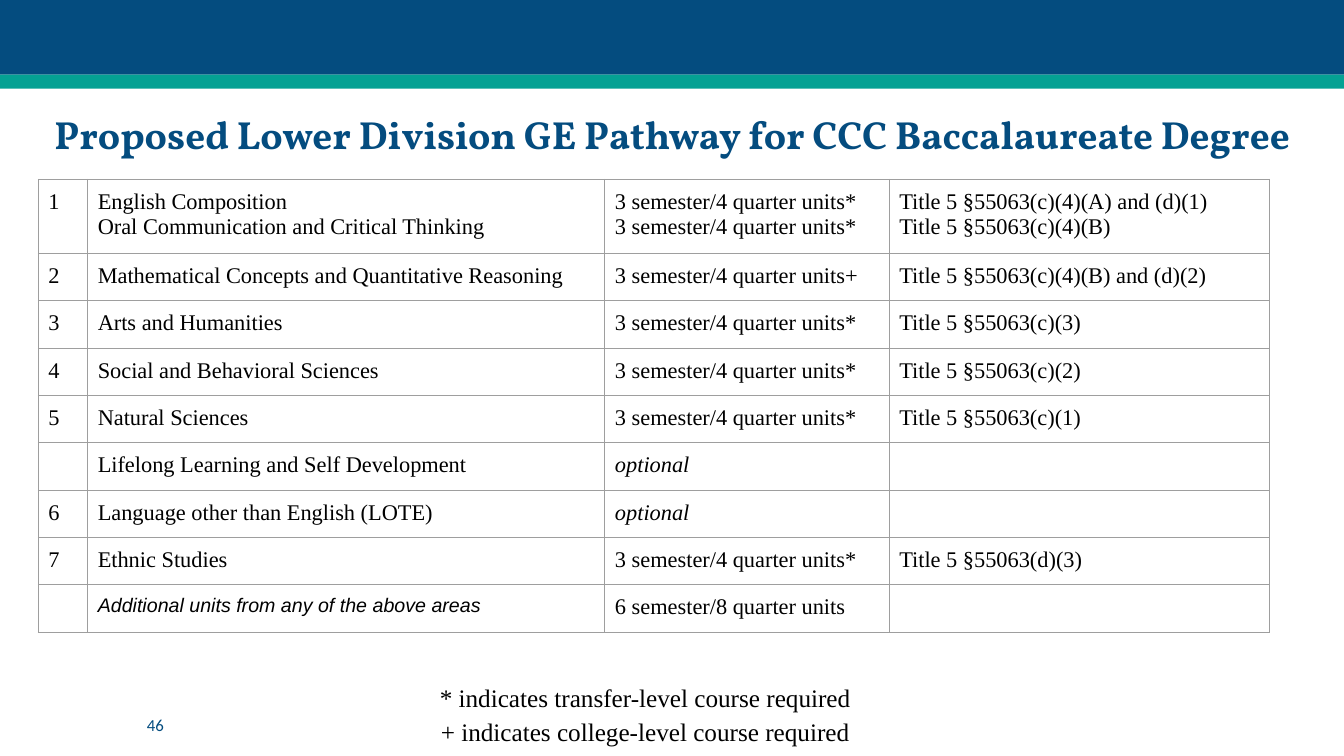
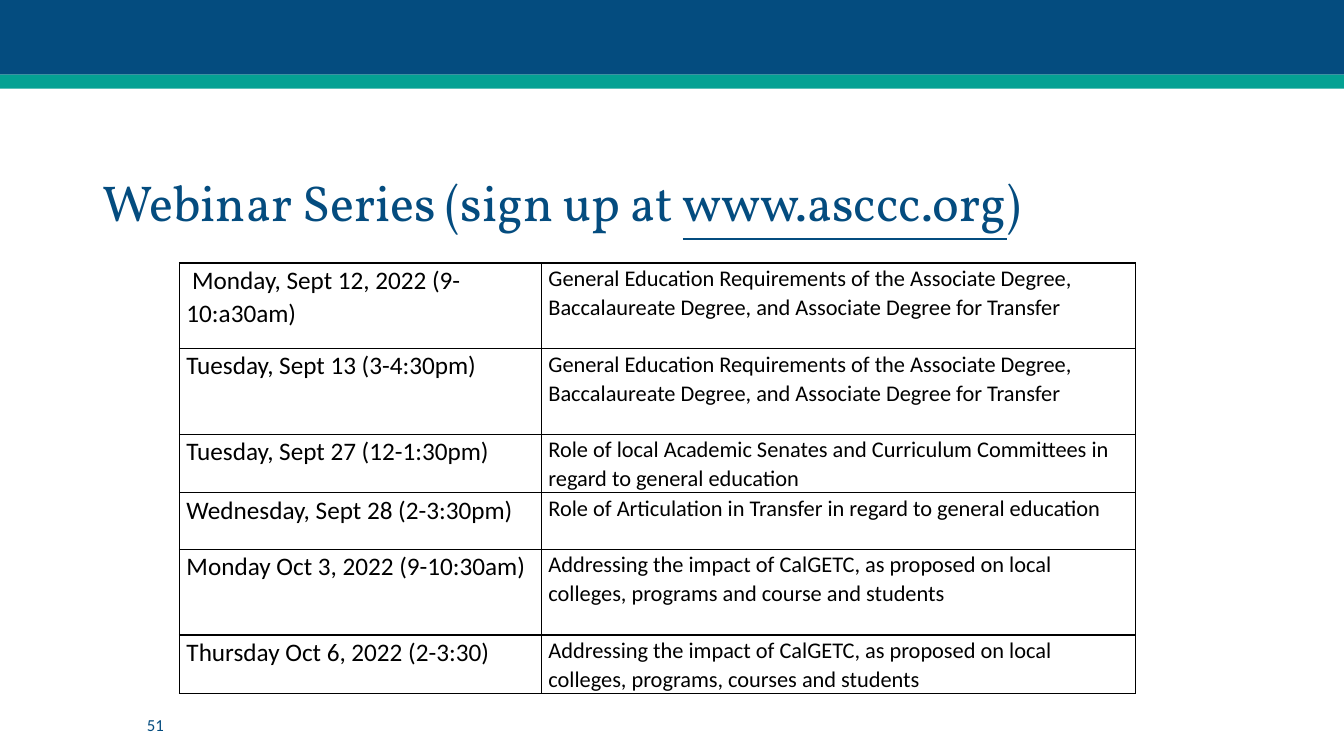
from lxml.etree import SubElement as Sub
from pptx import Presentation
from pptx.dml.color import RGBColor as Rgb
from pptx.enum.shapes import MSO_SHAPE as Shape
from pptx.enum.text import MSO_ANCHOR as Anchor, MSO_AUTO_SIZE as Auto, PP_ALIGN as Align
from pptx.oxml.ns import qn
from pptx.util import Inches, Pt

HUES = {"navy": "044C7F", "teal": "04A193", "black": "000000", "gray": "9E9E9E"}
SIDES = ("left", "top", "width", "height")
EDGES = ("left", "top", "right", "bottom")

HEAD = {"name": "Vollkorn", "size": Pt(36), "color": "navy"}
FOOT = {"name": "Calibri", "size": Pt(12), "color": "navy"}
SERIF = {"name": "Times New Roman", "size": Pt(16), "color": "black"}
SANS = {"name": "Calibri", "size": Pt(18), "color": "black"}
SLANT = {"italic": True}

UNITS = "3 semester/4 quarter units"
CODE = "Title 5 §55063"
EXTRA = "Additional units from any of the above areas"
AREAS = [
    ("1", "English Composition\nOral Communication and Critical Thinking",
     f"{UNITS}*\n{UNITS}*", f"{CODE}(c)(4)(A) and (d)(1)\n{CODE}(c)(4)(B)"),
    ("2", "Mathematical Concepts and Quantitative Reasoning",
     f"{UNITS}+", f"{CODE}(c)(4)(B) and (d)(2)"),
    ("3", "Arts and Humanities", f"{UNITS}*", f"{CODE}(c)(3)"),
    ("4", "Social and Behavioral Sciences", f"{UNITS}*", f"{CODE}(c)(2)"),
    ("5", "Natural Sciences", f"{UNITS}*", f"{CODE}(c)(1)"),
    ("", "Lifelong Learning and Self Development", "optional", ""),
    ("6", "Language other than English (LOTE)", "optional", ""),
    ("7", "Ethnic Studies", f"{UNITS}*", f"{CODE}(d)(3)"),
    ("", EXTRA, "6 semester/8 quarter units", ""),
]
STYLES = {"optional": SLANT, EXTRA: {"name": "Arial", "size": Pt(14), **SLANT}}

BASICS = ("General Education Requirements of the Associate Degree, "
          "Baccalaureate Degree, and Associate Degree for Transfer")
IMPACT = "Addressing the impact of CalGETC, as proposed on local colleges, programs"
TALKS = [
    (" Monday, Sept 12, 2022 (9-10:a30am)", BASICS),
    ("Tuesday, Sept 13 (3-4:30pm)", BASICS),
    ("Tuesday, Sept 27 (12-1:30pm)",
     "Role of local Academic Senates and Curriculum Committees in regard to general education"),
    ("Wednesday, Sept 28 (2-3:30pm)",
     "Role of Articulation in Transfer in regard to general education"),
    ("Monday Oct 3, 2022 (9-10:30am)", f"{IMPACT} and course and students"),
    ("Thursday Oct 6, 2022 (2-3:30)", f"{IMPACT}, courses and students"),
]


class Deck:
    def __init__(self):
        self.prs = Presentation()
        self.prs.slide_width, self.prs.slide_height = Inches(13.33), Inches(7.5)

    def page(self, number):
        self.slide = self.prs.slides.add_slide(self.prs.slide_layouts[5])
        self.band(0, 0.74, "navy")
        self.band(0.74, 0.14, "teal")
        self.text((1.36, 7.07, 0.9, 0.25), str(number), FOOT, pad=0.05, anchor=Anchor.MIDDLE)

    def band(self, top, height, hue):
        box = self.slide.shapes.add_shape(
            Shape.RECTANGLE, 0, Inches(top), self.prs.slide_width, Inches(height))
        box.shadow.inherit = False
        box.fill.solid()
        box.fill.fore_color.rgb = Rgb.from_string(HUES[hue])
        box.line.fill.background()

    def style(self, font, look):
        for key, value in look.items():
            if key == "color":
                font.color.rgb = Rgb.from_string(HUES[value])
            else:
                setattr(font, key, value)

    def fill(self, frame, lines, look, align=Align.LEFT, space=1.0):
        for index, line in enumerate(lines):
            para = frame.add_paragraph() if index else frame.paragraphs[0]
            para.alignment, para.line_spacing = align, space
            for words, extra in line:
                run = para.add_run()
                run.text = words
                self.style(run.font, {**look, **extra})

    def inset(self, item, wide, high):
        for edge in EDGES:
            setattr(item, f"margin_{edge}", Inches(wide if edge in ("left", "right") else high))

    def title(self, place, runs, anchor, align=Align.LEFT, **extra):
        box = self.slide.shapes.title
        for side, value in zip(SIDES, place):
            setattr(box, side, Inches(value))
        frame = box.text_frame
        frame.auto_size, frame.vertical_anchor = Auto.NONE, anchor
        self.inset(frame, 0.1, 0.05)
        self.fill(frame, [runs], {**HEAD, **extra}, align, 0.9)

    def text(self, place, words, look, pad=0.1, anchor=Anchor.TOP, **form):
        frame = self.slide.shapes.add_textbox(*map(Inches, place)).text_frame
        frame.word_wrap, frame.vertical_anchor = True, anchor
        self.inset(frame, 0.1, pad)
        self.fill(frame, [[(line, {})] for line in words.split("\n")], look, **form)

    def border(self, cell, hue, width):
        props = cell._tc.get_or_add_tcPr()
        for tag in ("lnL", "lnR", "lnT", "lnB"):
            line = Sub(props, qn(f"a:{tag}"), w=str(Pt(width)))
            Sub(Sub(line, qn("a:solidFill")), qn("a:srgbClr"), val=HUES[hue])

    def table(self, spot, cols, rows, data, looks, edge, pad, space=1.0):
        size = sum(cols), sum(rows)
        grid = self.slide.shapes.add_table(
            len(rows), len(cols), *map(Inches, (*spot, *size))).table
        grid.first_row = grid.horz_banding = False
        for col, width in zip(grid.columns, cols):
            col.width = Inches(width)
        for row, height, line in zip(grid.rows, rows, data):
            row.height = Inches(height)
            for cell, words, look in zip(row.cells, line, looks):
                self.border(cell, *edge)
                cell.fill.background()
                if words:
                    self.inset(cell, *pad)
                    parts = [[(part, STYLES.get(part, {}))] for part in words.split("\n")]
                    self.fill(cell.text_frame, parts, look, space=space)


def main():
    deck = Deck()

    deck.page(46)
    deck.title((0.38, 0.93, 12.57, 0.85),
               [("Proposed Lower Division GE Pathway for CCC Baccalaureate Degree", {})],
               Anchor.MIDDLE, Align.CENTER, size=Pt(28), bold=True)
    deck.table((0.38, 1.78), (0.49, 5.13, 2.82, 3.77), [0.73] + [0.47] * 8,
               AREAS, [SERIF] * 4, ("gray", 0.75), (0.1, 0.1))
    deck.text((3.31, 6.62, 6.18, 0.85),
              "* indicates transfer-level course required\n"
              "+ indicates college-level course required",
              {**SERIF, "size": Pt(18)}, align=Align.CENTER, space=1.15)

    deck.page(51)
    deck.title((0.92, 1.11, 11.5, 1.25),
               [("Webinar Series (sign up at ", {}),
                ("www.asccc.org", {"underline": True}), (")", {})], Anchor.BOTTOM)
    deck.table((1.78, 2.61), (3.59, 5.89), (0.85, 0.85, 0.58, 0.56, 0.85, 0.58),
               TALKS, (SANS, {**SANS, "size": Pt(16)}), ("black", 1), (0.07, 0), 1.07)

    deck.prs.save("out.pptx")


if __name__ == "__main__":
    main()
